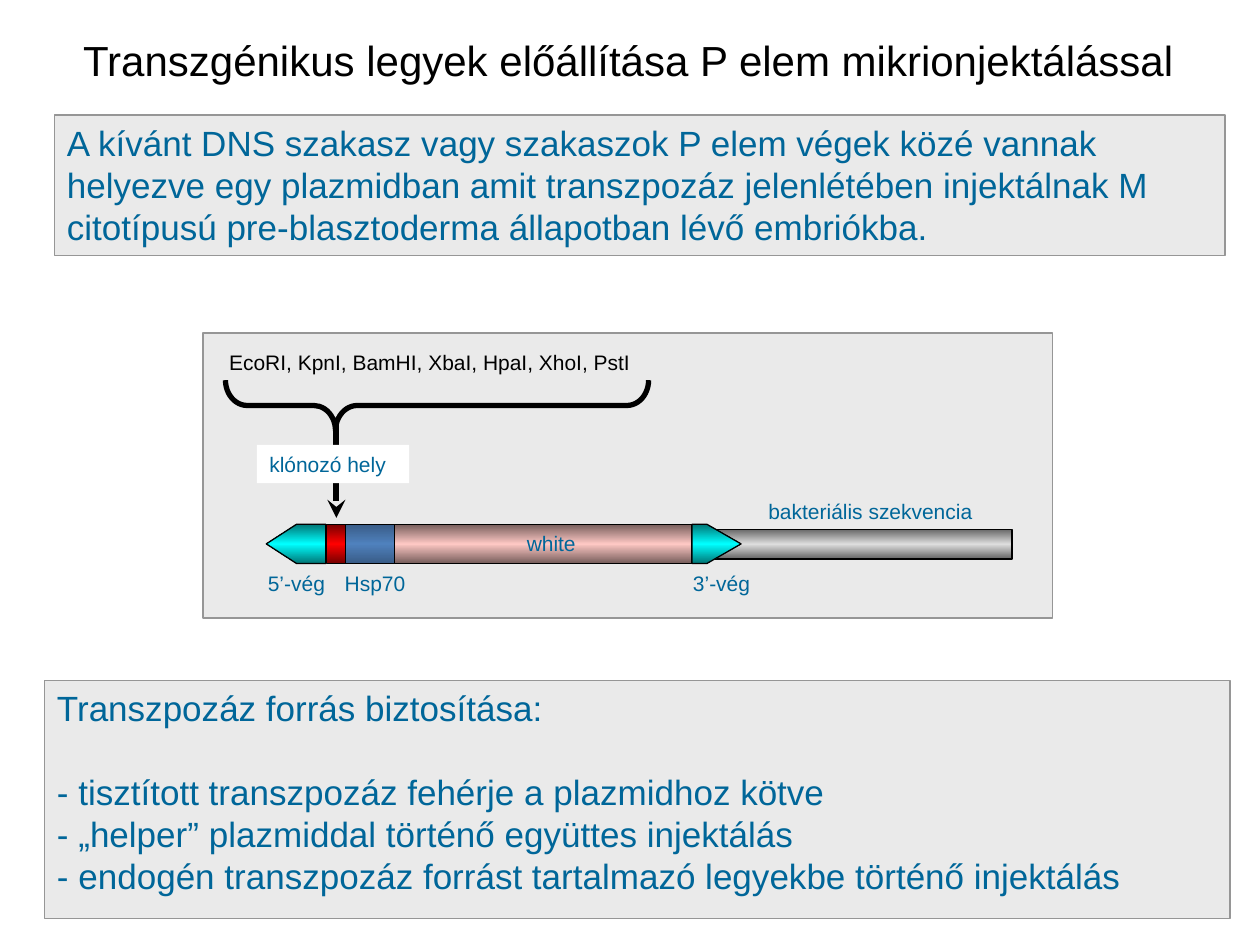
from copy import deepcopy
from dataclasses import dataclass

from lxml.etree import SubElement
from pptx import Presentation
from pptx.dml.color import RGBColor
from pptx.enum.shapes import MSO_CONNECTOR, MSO_SHAPE
from pptx.enum.text import MSO_ANCHOR, PP_ALIGN
from pptx.oxml.ns import qn
from pptx.util import Cm, Pt

FONT = "Arial"
BLACK, WHITE, TEAL = "000000", "FFFFFF", "006699"
PANEL, PANEL_EDGE = "EAEAEA", "969696"


@dataclass
class Box:
    left: float
    top: float
    width: float
    height: float

    def lengths(self) -> tuple:
        return Cm(self.left), Cm(self.top), Cm(self.width), Cm(self.height)


@dataclass
class Segment:
    box: Box
    edge: str
    middle: str
    kind: MSO_SHAPE = MSO_SHAPE.RECTANGLE
    point: float = 0
    flipped: bool = False


@dataclass
class Label:
    text: str
    box: Box
    color: str = TEAL


def rgb(color: str) -> RGBColor:
    return RGBColor.from_string(color)


def write(shape, lines: list, size: float, color: str, align=PP_ALIGN.LEFT,
          wrap: bool = True, gap: float = 0) -> None:
    """Write one paragraph per line; gap separates the first from the rest."""
    frame = shape.text_frame
    frame.word_wrap = wrap
    frame.vertical_anchor = MSO_ANCHOR.TOP
    for index, line in enumerate(lines):
        paragraph = frame.add_paragraph() if index else frame.paragraphs[0]
        paragraph.alignment = align
        if index == 1 and gap:
            paragraph.space_before = Pt(gap)
        run = paragraph.add_run()
        run.text = line
        run.font.name = FONT
        run.font.size = Pt(size)
        run.font.color.rgb = rgb(color)


def add_panel(slide, box: Box, fill: str = PANEL, edge: str = PANEL_EDGE):
    panel = slide.shapes.add_shape(MSO_SHAPE.RECTANGLE, *box.lengths())
    panel.shadow.inherit = False
    panel.fill.solid()
    panel.fill.fore_color.rgb = rgb(fill)
    if edge:
        panel.line.color.rgb = rgb(edge)
        panel.line.width = Pt(1)
    else:
        panel.line.fill.background()
    return panel


def add_segment(slide, segment: Segment) -> None:
    shape = slide.shapes.add_shape(segment.kind, *segment.box.lengths())
    shape.shadow.inherit = False
    if segment.point:
        shape.adjustments[0] = segment.point
    if segment.flipped:
        shape._element.spPr.find(qn("a:xfrm")).set("flipH", "1")
    shape.line.color.rgb = rgb(BLACK)
    shape.line.width = Pt(0.75)

    # Vertical gradient: edge, middle, edge
    shape.fill.gradient()
    shape.fill.gradient_angle = 270
    first, second = shape.fill.gradient_stops
    first.color.rgb, first.position = rgb(segment.edge), 0
    second.color.rgb, second.position = rgb(segment.middle), 0.5
    stops = shape._element.spPr.find(qn("a:gradFill")).find(qn("a:gsLst"))
    last = deepcopy(stops[0])
    last.set("pos", "100000")
    stops.append(last)


def add_label(slide, label: Label) -> None:
    textbox = slide.shapes.add_textbox(*label.box.lengths())
    write(textbox, [label.text], 12, label.color, wrap=False)


def add_arrow(slide, x: float, start: float, end: float) -> None:
    arrow = slide.shapes.add_connector(
        MSO_CONNECTOR.STRAIGHT, Cm(x), Cm(start), Cm(x), Cm(end))
    arrow.line.color.rgb = rgb(BLACK)
    arrow.line.width = Pt(3.5)
    SubElement(arrow.line._get_or_add_ln(), qn("a:tailEnd"), type="stealth")
    SubElement(arrow._element.spPr, qn("a:effectLst"))


def add_brace(slide, box: Box) -> None:
    brace = slide.shapes.add_shape(MSO_SHAPE.RIGHT_BRACE, *box.lengths())
    brace.shadow.inherit = False
    brace.rotation = 90
    brace.adjustments[0] = 0.43
    brace.adjustments[1] = 0.74
    brace.fill.background()
    brace.line.color.rgb = rgb(BLACK)
    brace.line.width = Pt(3)


# Construct: the P element and the plasmid backbone
BAR_TOP, BAR_HEIGHT = 10.57, 0.79
CYAN = ("007676", "00FFFF")


def bar(left: float, width: float) -> Box:
    return Box(left, BAR_TOP, width, BAR_HEIGHT)


SEGMENTS = [
    Segment(bar(6.58, 0.4), "760000", "FF0000"),
    Segment(bar(6.97, 0.99), "395C87", "4F81BD"),
    Segment(bar(7.96, 5.99), "765D5B", "FEC8C4"),
    Segment(Box(14.4, 10.67, 6, 0.6), "666666", "DDDDDD"),
    Segment(bar(5.37, 1.2), *CYAN, MSO_SHAPE.PENTAGON, 0.77, True),
    Segment(bar(13.95, 0.99), *CYAN, MSO_SHAPE.PENTAGON, 0.87),
]

LABEL_HEIGHT, END_TOP = 0.77, 11.38
LABELS = [
    Label("5’-vég", Box(5.15, END_TOP, 1.73, LABEL_HEIGHT)),
    Label("3’-vég", Box(13.72, END_TOP, 1.73, LABEL_HEIGHT)),
    Label("white", Box(10.37, BAR_TOP, 1.6, LABEL_HEIGHT)),
    Label("bakteriális szekvencia", Box(15.24, 9.93, 4.95, LABEL_HEIGHT)),
    Label("Hsp70", Box(6.7, END_TOP, 1.79, LABEL_HEIGHT)),
    Label("EcoRI, KpnI, BamHI, XbaI, HpaI, XhoI, PstI",
          Box(4.37, 6.93, 8.94, LABEL_HEIGHT), BLACK),
]

INTRODUCTION = (
    "A kívánt DNS szakasz vagy szakaszok P elem végek közé vannak helyezve "
    "egy plazmidban amit transzpozáz jelenlétében injektálnak M citotípusú "
    "pre-blasztoderma állapotban lévő embriókba."
)
SOURCES = [
    "Transzpozáz forrás biztosítása:",
    "- tisztított transzpozáz fehérje a plazmidhoz kötve",
    "- „helper” plazmiddal történő együttes injektálás",
    "- endogén transzpozáz forrást tartalmazó legyekbe történő injektálás",
]


def main() -> None:
    deck = Presentation()
    deck.slide_width, deck.slide_height = Cm(25.4), Cm(19.05)
    slide = deck.slides.add_slide(deck.slide_layouts[6])

    # Title and text panels
    title = slide.shapes.add_textbox(*Box(0.41, 0.58, 24.51, 1.27).lengths())
    write(title, ["Transzgénikus legyek előállítása P elem mikrionjektálással"],
          24, BLACK, PP_ALIGN.CENTER)
    introduction = add_panel(slide, Box(1.1, 2.32, 23.6, 2.83))
    write(introduction, [INTRODUCTION], 20, TEAL)
    sources = add_panel(slide, Box(0.9, 13.72, 23.9, 4.8))
    write(sources, SOURCES, 20, TEAL, gap=24)

    # Construct diagram
    add_panel(slide, Box(4.1, 6.72, 17.12, 5.74))
    for segment in SEGMENTS:
        add_segment(slide, segment)
    for label in LABELS:
        add_label(slide, label)

    # Cloning site
    add_brace(slide, Box(8.3, 3.91, 1.02, 8.53))
    add_arrow(slide, 6.78, 8.53, 10.44)
    cloning_site = add_panel(slide, Box(5.18, 8.97, 3.07, 0.77), WHITE, "")
    write(cloning_site, ["klónozó hely"], 12, TEAL)

    deck.save("out.pptx")


if __name__ == "__main__":
    main()
